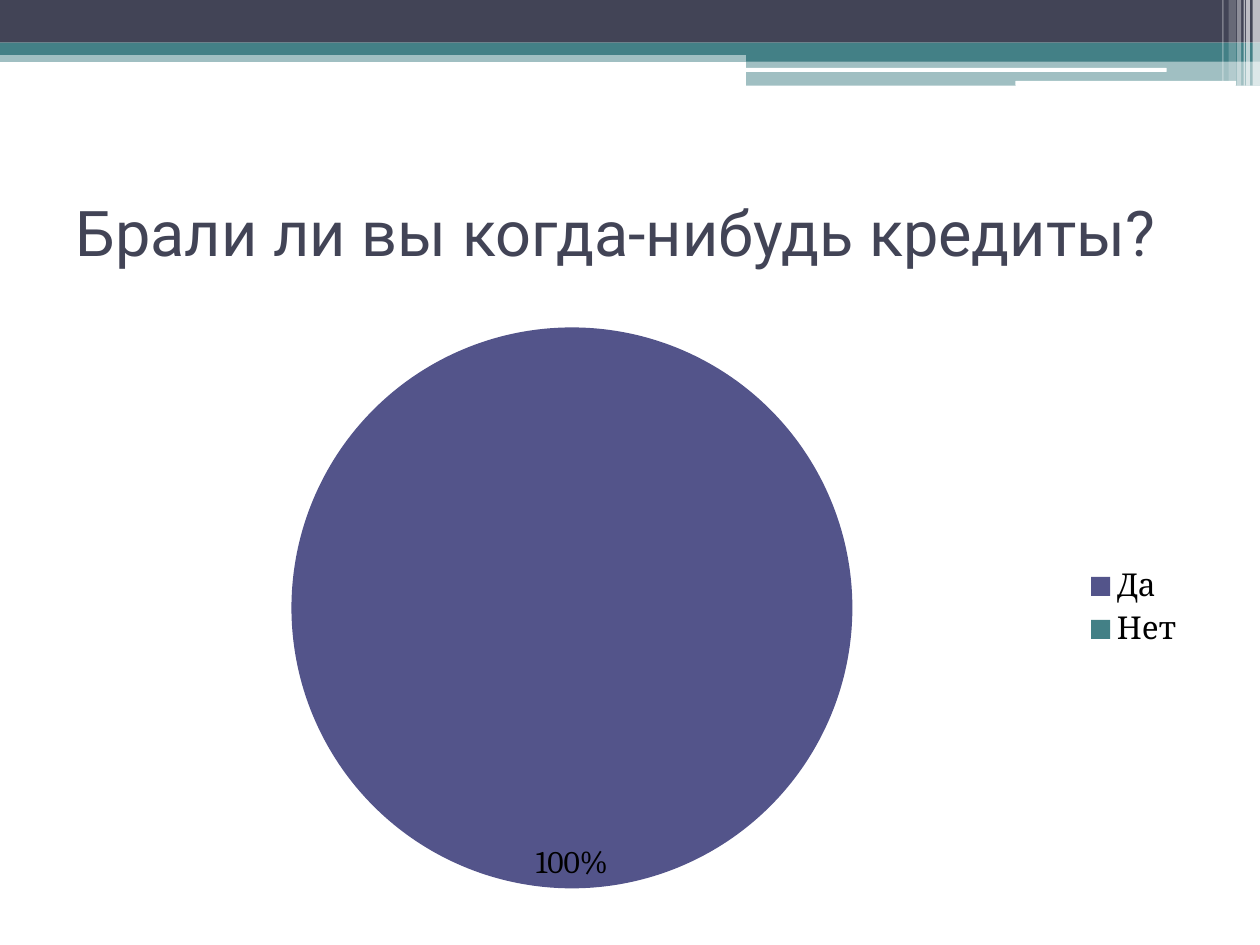
"""Builds a slide with a pie chart of the answers to a survey question about loans."""
import lxml.etree
import pptx
import pptx.chart.data
import pptx.dml.color
import pptx.enum.chart
import pptx.enum.shapes
import pptx.enum.text
import pptx.oxml.ns
import pptx.util

COLORS = {
    "dark": "424456",
    "teal": "438086",
    "violet": "53548A",
    "white": "FFFFFF",
    "black": "000000",
}
SLIDE_WIDTH = 25.4
SLIDE_HEIGHT = 19.05
MARGIN = 1.27
CONTENT_WIDTH = SLIDE_WIDTH - 2 * MARGIN
TAB_LEFT = 15.04
TAB_WIDTH = SLIDE_WIDTH - TAB_LEFT
TALL_STRIPE = 1.73
SHORT_STRIPE = 1.63

BANDS = [
    (0, 1.02, SLIDE_WIDTH, 0.23, "teal", 50),
    (0, 0, SLIDE_WIDTH, 0.86, "dark", 100),
    (0, 0.86, SLIDE_WIDTH, 0.25, "teal", 100),
    (TAB_LEFT, 0.99, TAB_WIDTH, 0.25, "teal", 100),
    (TAB_LEFT, 1.22, TAB_WIDTH, 0.51, "teal", 50),
]
ROUNDED_LINES = [(15.01, 1.37, 8.51, 0.08), (20.47, 1.63, 4.45, 0.1)]
STRIPES = [
    (25.25, 0.15, TALL_STRIPE, 65),
    (25.12, 0.08, TALL_STRIPE, 65),
    (25.07, 0.03, TALL_STRIPE, 60),
    (24.94, 0.08, TALL_STRIPE, 40),
    (24.77, 0.15, SHORT_STRIPE, 20),
    (24.64, 0.03, SHORT_STRIPE, 30),
]
ANSWERS = [("Да", 100, "violet"), ("Нет", 0, "teal")]


class SlideBuilder:
    """Holds the style and the current slide."""

    title_font = "Roboto"
    chart_font = "Cambria"
    title_size = 36
    chart_size = 18

    def __init__(self, presentation):
        self.slide = presentation.slides.add_slide(presentation.slide_layouts[5])

    def color(self, name):
        return pptx.dml.color.RGBColor.from_string(COLORS[name])

    def box(self, *lengths):
        return [pptx.util.Cm(length) for length in lengths]

    def bar(self, left, top, width, height, color, opacity=100, rounded=False):
        kinds = pptx.enum.shapes.MSO_SHAPE
        kind = kinds.ROUNDED_RECTANGLE if rounded else kinds.RECTANGLE
        shape = self.slide.shapes.add_shape(kind, *self.box(left, top, width, height))
        shape.shadow.inherit = False
        shape.line.fill.background()
        shape.fill.solid()
        shape.fill.fore_color.rgb = self.color(color)
        if opacity < 100:
            qualified_name = pptx.oxml.ns.qn
            fill_color = shape.fill._xPr.find(".//" + qualified_name("a:srgbClr"))
            alpha = lxml.etree.SubElement(fill_color, qualified_name("a:alpha"))
            alpha.set("val", str(opacity * 1000))

    def title(self, text, left, top, width, height):
        shape = self.slide.shapes.title
        shape.left, shape.top, shape.width, shape.height = self.box(left, top, width, height)
        shape.text_frame.vertical_anchor = pptx.enum.text.MSO_ANCHOR.MIDDLE
        paragraph = shape.text_frame.paragraphs[0]
        paragraph.alignment = pptx.enum.text.PP_ALIGN.LEFT
        run = paragraph.add_run()
        run.text = text
        run.font.name = self.title_font
        run.font.size = pptx.util.Pt(self.title_size)
        run.font.color.rgb = self.color("dark")

    def pie(self, answers, left, top, width, height):
        names, values, colors = zip(*answers)
        data = pptx.chart.data.CategoryChartData()
        data.categories = names
        data.add_series("Series 1", values)
        chart = self.slide.shapes.add_chart(
            pptx.enum.chart.XL_CHART_TYPE.PIE, *self.box(left, top, width, height), data
        ).chart
        chart.has_title = False
        chart.font.name = self.chart_font
        chart.font.size = pptx.util.Pt(self.chart_size)
        chart.font.color.rgb = self.color("black")
        chart.has_legend = True
        chart.legend.position = pptx.enum.chart.XL_LEGEND_POSITION.RIGHT
        chart.legend.include_in_layout = False
        plot = chart.plots[0]
        plot.vary_by_categories = True
        for index, color in enumerate(colors):
            fill = plot.series[0].points[index].format.fill
            fill.solid()
            fill.fore_color.rgb = self.color(color)
        plot.has_data_labels = True
        labels = plot.data_labels
        labels.show_percentage = True
        labels.show_value = False
        labels.number_format = "0%;;"
        labels.number_format_is_linked = False
        labels.position = pptx.enum.chart.XL_LABEL_POSITION.INSIDE_END


def main():
    presentation = pptx.Presentation()
    presentation.slide_width = pptx.util.Cm(SLIDE_WIDTH)
    presentation.slide_height = pptx.util.Cm(SLIDE_HEIGHT)
    builder = SlideBuilder(presentation)
    for band in BANDS:
        builder.bar(*band)
    for line in ROUNDED_LINES:
        builder.bar(*line, "white", rounded=True)
    for left, width, height, opacity in STRIPES:
        builder.bar(left, 0, width, height, "white", opacity)
    builder.title("Брали ли вы когда-нибудь кредиты?", MARGIN, 3.18, CONTENT_WIDTH, 2.97)
    builder.pie(ANSWERS, MARGIN, 6.25, CONTENT_WIDTH, 12.01)
    presentation.save("out.pptx")


if __name__ == "__main__":
    main()
